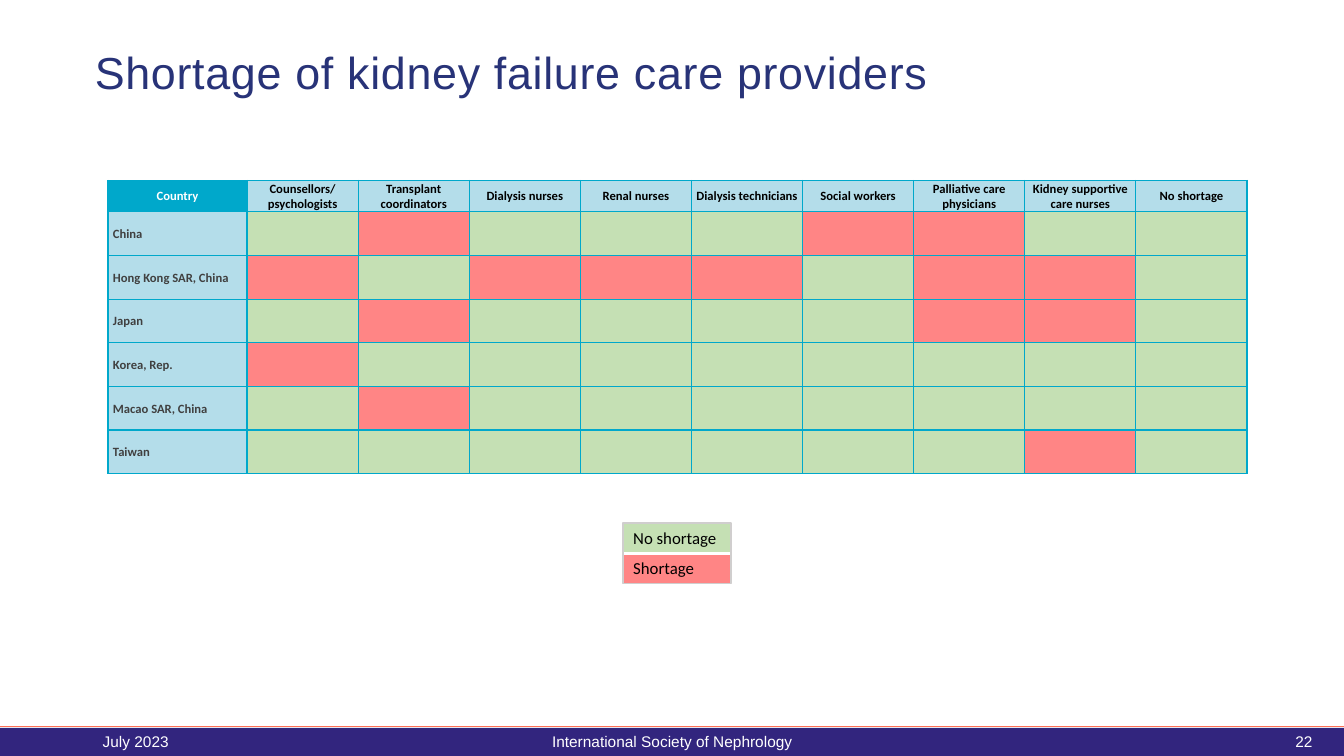
from lxml import etree
from pptx import Presentation
from pptx.dml.color import RGBColor
from pptx.enum.shapes import MSO_CONNECTOR, MSO_SHAPE
from pptx.enum.text import MSO_ANCHOR, MSO_AUTO_SIZE, PP_ALIGN
from pptx.oxml.ns import qn
from pptx.util import Inches, Pt

LEFT, MID, RIGHT = PP_ALIGN.LEFT, PP_ALIGN.CENTER, PP_ALIGN.RIGHT
MIDDLE = MSO_ANCHOR.MIDDLE
RECT, LINE = MSO_SHAPE.RECTANGLE, MSO_CONNECTOR.STRAIGHT

GREEN, RED, TEAL, PALE = "C5E0B4", "FF8585", "00A8CB", "B4DDEA"
WHITE, BLACK = "FFFFFF", "000000"

ROLES = ["Counsellors/ psychologists", "Transplant coordinators",
         "Dialysis nurses", "Renal nurses", "Dialysis technicians",
         "Social workers", "Palliative care physicians",
         "Kidney supportive care nurses", "No shortage"]
# Columns with a shortage, counted from 1
SHORT = {"China": (2, 6, 7), "Hong Kong SAR, China": (1, 3, 4, 5, 7, 8),
         "Japan": (2, 7, 8), "Korea, Rep.": (1,),
         "Macao SAR, China": (2,), "Taiwan": (8,)}

prs = Presentation()
prs.slide_width, prs.slide_height = Inches(13.33), Inches(7.5)


def box(x, y, w, h):
    """Turn percentages of the slide into lengths."""
    wide, high = prs.slide_width / 100, prs.slide_height / 100
    return int(x * wide), int(y * high), int(w * wide), int(h * high)


def color(code):
    return RGBColor.from_string(code)


def paint(part, code):
    part.fill.solid()
    part.fill.fore_color.rgb = color(code)


def write(frame, text, size, face, code, align=LEFT, bold=False):
    para = frame.paragraphs[0]
    para.text = text
    para.alignment = align
    font = para.font
    font.size, font.name, font.bold = Pt(size), face, bold
    font.color.rgb = color(code)
    return para


def edge(cell, code, base=1):
    """Draw the four borders of a cell; base is the width of the lower one."""
    props = cell._tc.get_or_add_tcPr()
    for side in "LRTB":
        width = Pt(base if side == "B" else 1)
        line = etree.SubElement(props, qn(f"a:ln{side}"), w=str(width))
        fill = etree.SubElement(line, qn("a:solidFill"))
        etree.SubElement(fill, qn("a:srgbClr"), val=code)


def grid(slide, rows, cols, area):
    table = slide.shapes.add_table(rows, cols, *area).table
    table.first_row = table.horz_banding = False
    return table


def add_title(slide, area):
    title = slide.shapes.title
    title.left, title.top, title.width, title.height = area
    frame = title.text_frame
    frame.auto_size = MSO_AUTO_SIZE.NONE
    frame.vertical_anchor = MIDDLE
    para = write(frame, "Shortage of kidney failure care providers",
                 32, "Arial", "283378")
    para.line_spacing = 0.9
    para.runs[0]._r.get_or_add_rPr().set("spc", "50")


def label(cell, text, code, align, role):
    """Fill in a header cell; role is True for the care providers."""
    cell.vertical_anchor = MIDDLE
    side = Inches(0.01 if role else 0.05)
    cell.margin_left = cell.margin_right = side
    cell.margin_top = side if role else 0
    cell.margin_bottom = 0
    para = write(cell.text_frame, text, 9, "Calibri", code, align, True)
    if not role:
        para.line_spacing = 1.07


def add_matrix(slide, area):
    wide, high = area[2:]
    table = grid(slide, len(SHORT) + 1, len(ROLES) + 1, area)
    first = int(wide * 0.1221)
    for i, col in enumerate(table.columns):
        col.width = (wide - first) // len(ROLES) if i else first
    for i, row in enumerate(table.rows):
        row.height = int(high * (0.15 if i else 0.08))
    for cell in table.iter_cells():
        edge(cell, TEAL)

    # Header row
    for i, text in enumerate(["Country"] + ROLES):
        cell = table.cell(0, i)
        label(cell, text, BLACK if i else WHITE, MID, i > 0)
        paint(cell, PALE if i else TEAL)

    # One row for each country
    for r, (land, lacks) in enumerate(SHORT.items(), 1):
        label(table.cell(r, 0), land, "404040", LEFT, False)
        paint(table.cell(r, 0), PALE)
        for c in range(1, len(ROLES) + 1):
            paint(table.cell(r, c), RED if c in lacks else GREEN)


def add_legend(slide, area):
    keys = [("No shortage", GREEN, 3), ("Shortage", RED, 1)]
    table = grid(slide, len(keys), 1, area)
    for i, (text, code, base) in enumerate(keys):
        table.rows[i].height = int(area[3] * 0.37)
        cell = table.cell(i, 0)
        edge(cell, WHITE, base)
        paint(cell, code)
        write(cell.text_frame, text, 12, "Calibri", BLACK)
    frame = slide.shapes.add_shape(RECT, *area)
    frame.shadow.inherit = False
    frame.fill.background()
    frame.line.color.rgb = color("D0CECE")
    frame.line.width = Pt(1)


def add_footer(slide, area):
    x, y, w, h = area
    bar = slide.shapes.add_shape(RECT, *area)
    bar.shadow.inherit = False
    paint(bar, "32257E")
    bar.line.fill.background()
    top = y - Inches(0.01)
    rule = slide.shapes.add_connector(LINE, x, top, x + w, top)
    rule.line.color.rgb = color("FE7055")
    rule.line.width = Pt(0.75)
    etree.SubElement(rule._element.spPr, qn("a:effectLst"))

    # Date, society and page number
    notes = [("July 2023", 6.9, 22.5, LEFT),
             ("International Society of Nephrology", 33.15, 33.75, MID),
             ("22", 70.65, 27.75, RIGHT)]
    for text, start, span, align in notes:
        note = slide.shapes.add_textbox(x + int(w * start / 100),
                                        y - int(h / 4),
                                        int(w * span / 100), int(h * 1.43))
        frame = note.text_frame
        frame.word_wrap = True
        frame.vertical_anchor = MIDDLE
        write(frame, text, 11, "Arial", WHITE, align)


def main():
    slide = prs.slides.add_slide(prs.slide_layouts[5])
    add_footer(slide, box(0, 96.27, 100, 3.73))
    add_title(slide, box(6.3, 5.2, 69.45, 9.47))
    add_matrix(slide, box(8.03, 23.87, 84.77, 38.53))
    add_legend(slide, box(46.36, 69.2, 8.03, 8))
    prs.save("out.pptx")


if __name__ == "__main__":
    main()
